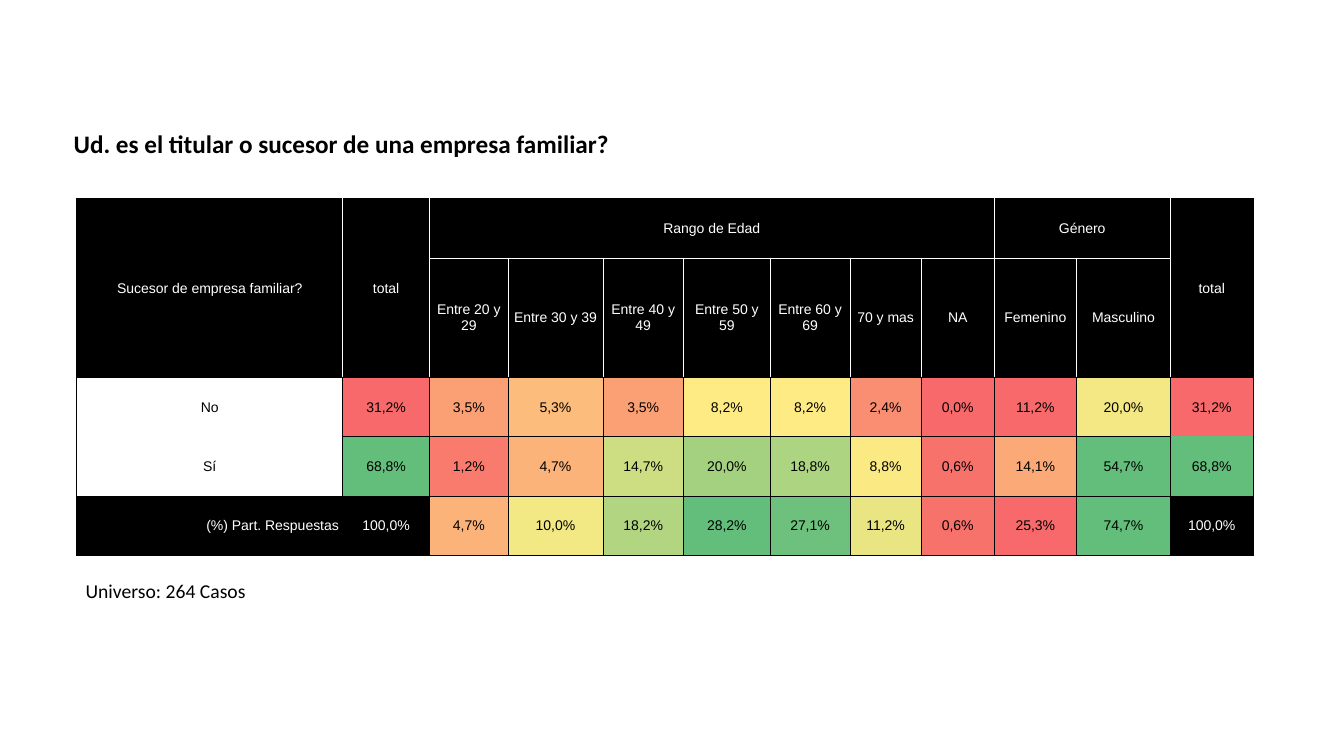
from lxml.etree import SubElement, Element
from pptx import Presentation
from pptx.dml.color import RGBColor
from pptx.enum.text import MSO_ANCHOR as Anchor, PP_ALIGN as Align
from pptx.oxml.ns import qn
from pptx.util import Inches, Pt

BLACK = RGBColor(0x00, 0x00, 0x00)
WHITE = RGBColor(0xFF, 0xFF, 0xFF)

COLUMN_WIDTHS = [2.64, 0.86, 0.78, 0.94, 0.8, 0.86, 0.79, 0.71, 0.72, 0.82, 0.93, 0.82]
ROW_HEIGHTS = [0.59, 1.18, 0.59, 0.59, 0.59]
LAST_COLUMN = len(COLUMN_WIDTHS) - 1
HEADER_ROWS = 2

# first row, first column, last row, last column, text
MERGED_HEADERS = [
    (0, 0, 1, 0, "Sucesor de empresa familiar?"),
    (0, 1, 1, 1, "total"),
    (0, 2, 0, 8, "Rango de Edad"),
    (0, 9, 0, 10, "Género"),
    (0, 11, 1, 11, "total"),
]
GROUP_EDGES = {1, 2, 9, 11}
SUBHEADERS = ["Entre 20 y 29", "Entre 30 y 39", "Entre 40 y 49", "Entre 50 y 59",
              "Entre 60 y 69", "70 y mas", "NA", "Femenino", "Masculino"]
BODY = [
    ["No", "31,2%", "3,5%", "5,3%", "3,5%", "8,2%", "8,2%", "2,4%", "0,0%",
     "11,2%", "20,0%", "31,2%"],
    ["Sí", "68,8%", "1,2%", "4,7%", "14,7%", "20,0%", "18,8%", "8,8%", "0,6%",
     "14,1%", "54,7%", "68,8%"],
    ["(%) Part. Respuestas", "100,0%", "4,7%", "10,0%", "18,2%", "28,2%", "27,1%",
     "11,2%", "0,6%", "25,3%", "74,7%", "100,0%"],
]
HEAT_COLORS = [
    [None, "F8696B", "FBA075", "FCBC7B", "FBA075", "FFEB84", "FFEB84", "FA8E72",
     "F8696B", "F8696B", "F3E884", "F8696B"],
    [None, "63BE7B", "F97B6E", "FCB379", "CDDD82", "A4D17F", "ADD480", "FBEA84",
     "F8726C", "FBA977", "63BE7B", "63BE7B"],
    ["000000", "000000", "FCB379", "F2E884", "B1D580", "63BE7B", "6DC17C", "E9E583",
     "F8726C", "F8696B", "63BE7B", "000000"],
]


def format_text(paragraph, font_name, size, color, bold=False):
    for run in paragraph.runs:
        run.font.name = font_name
        run.font.size = Pt(size)
        run.font.bold = bold
        run.font.color.rgb = color


def vertical_edge(row, edge):
    """Colour of the line at the left of column number edge."""
    if row >= HEADER_ROWS or edge in (0, LAST_COLUMN + 1):
        return BLACK
    return WHITE if row == 1 or edge in GROUP_EDGES else BLACK


def horizontal_edge(edge, column):
    """Colour of the line above row number edge, None for no line."""
    if edge == 1:
        return WHITE if 2 <= column < LAST_COLUMN else BLACK
    if edge == 3 and column in (0, LAST_COLUMN):
        return None
    return BLACK


def set_borders(cell, row, column):
    borders = [("a:lnL", vertical_edge(row, column)),
               ("a:lnR", vertical_edge(row, column + 1)),
               ("a:lnT", horizontal_edge(row, column)),
               ("a:lnB", horizontal_edge(row + 1, column))]
    properties = cell._tc.get_or_add_tcPr()
    for position, (tag, color) in enumerate(borders):
        line = Element(qn(tag), w=str(Pt(0.5)))
        if color is None:
            SubElement(line, qn("a:noFill"))
        else:
            fill = SubElement(line, qn("a:solidFill"))
            SubElement(fill, qn("a:srgbClr"), val=str(color))
        properties.insert(position, line)


def write_cell(cell, text, color, align=Align.CENTER):
    cell.text_frame.text = text
    paragraph = cell.text_frame.paragraphs[0]
    paragraph.alignment = align
    format_text(paragraph, "Arial", 10, color)


def fill_cell(cell, color):
    if color is None:
        cell.fill.background()
    else:
        cell.fill.solid()
        cell.fill.fore_color.rgb = color


def write_header(table):
    for top, left, bottom, right, text in MERGED_HEADERS:
        table.cell(top, left).merge(table.cell(bottom, right))
        write_cell(table.cell(top, left), text, WHITE)
    for column, text in enumerate(SUBHEADERS, start=2):
        write_cell(table.cell(1, column), text, WHITE)
    for row in range(HEADER_ROWS):
        for column in range(LAST_COLUMN + 1):
            fill_cell(table.cell(row, column), BLACK)


def write_body(table):
    for row, (texts, colors) in enumerate(zip(BODY, HEAT_COLORS), start=HEADER_ROWS):
        for column, (text, code) in enumerate(zip(texts, colors)):
            cell = table.cell(row, column)
            fill = RGBColor.from_string(code) if code else None
            is_total_label = column == 0 and fill == BLACK
            write_cell(cell, text, WHITE if fill == BLACK else BLACK,
                       Align.RIGHT if is_total_label else Align.CENTER)
            fill_cell(cell, fill)


def add_results_table(slide, left, top):
    frame = slide.shapes.add_table(
        len(ROW_HEIGHTS), len(COLUMN_WIDTHS), Inches(left), Inches(top),
        Inches(sum(COLUMN_WIDTHS)), Inches(sum(ROW_HEIGHTS)))
    table = frame.table
    table.first_row = table.horz_banding = False
    for column, width in zip(table.columns, COLUMN_WIDTHS):
        column.width = Inches(width)
    for row, height in zip(table.rows, ROW_HEIGHTS):
        row.height = Inches(height)
    write_header(table)
    write_body(table)
    for row in range(len(ROW_HEIGHTS)):
        for column in range(LAST_COLUMN + 1):
            cell = table.cell(row, column)
            cell.vertical_anchor = Anchor.MIDDLE
            cell.margin_left = cell.margin_right = Inches(0.04)
            cell.margin_top, cell.margin_bottom = Inches(0.01), 0
            set_borders(cell, row, column)


def place_title(slide, left, top, width, height):
    title = slide.shapes.title
    title.left, title.top = Inches(left), Inches(top)
    title.width, title.height = Inches(width), Inches(height)
    frame = title.text_frame
    frame.text = "Ud. es el titular o sucesor de una empresa familiar?"
    frame.word_wrap = True
    frame.vertical_anchor = Anchor.TOP
    paragraph = frame.paragraphs[0]
    paragraph.alignment = Align.LEFT
    format_text(paragraph, "Calibri", 18, BLACK, bold=True)


def add_sample_note(slide, left, top, width, height):
    box = slide.shapes.add_textbox(Inches(left), Inches(top), Inches(width), Inches(height))
    box.text_frame.word_wrap = True
    box.text_frame.text = "Universo: 264 Casos"
    format_text(box.text_frame.paragraphs[0], "Calibri", 14, BLACK)


def main():
    presentation = Presentation()
    presentation.slide_width = Inches(13.33)
    presentation.slide_height = Inches(7.5)
    slide = presentation.slides.add_slide(presentation.slide_layouts[5])
    place_title(slide, 0.63, 1.22, 6.67, 0.4)
    add_results_table(slide, 0.76, 1.97)
    add_sample_note(slide, 0.75, 5.69, 3.21, 0.34)
    presentation.save("out.pptx")


if __name__ == "__main__":
    main()
